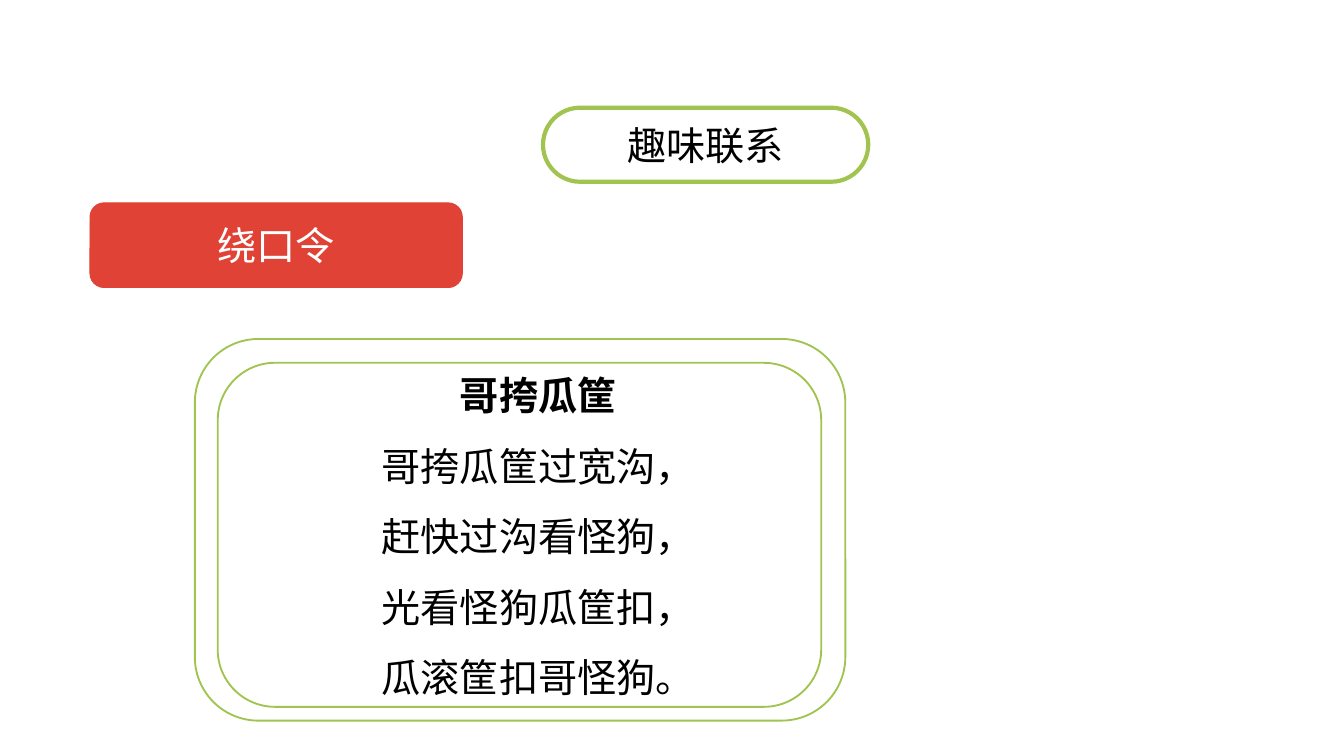
from dataclasses import dataclass

from lxml import etree
from pptx import Presentation
from pptx.dml.color import RGBColor
from pptx.enum.shapes import MSO_SHAPE
from pptx.enum.text import MSO_ANCHOR, MSO_AUTO_SIZE, PP_ALIGN
from pptx.oxml.ns import qn
from pptx.util import Inches, Pt

ROUNDED = MSO_SHAPE.ROUNDED_RECTANGLE
MIDDLE, TOP = MSO_ANCHOR.MIDDLE, MSO_ANCHOR.TOP
CENTER = PP_ALIGN.CENTER
GROW = MSO_AUTO_SIZE.SHAPE_TO_FIT_TEXT
BLANK_LAYOUT = 6


@dataclass(frozen=True)
class Theme:
    font: str = "Noto Sans CJK SC"
    size: float = 21
    green: str = "A1C450"
    red: str = "E04236"
    dark: str = "000000"
    light: str = "FFFFFF"


THEME = Theme()
WIDTH = Inches(10)
HEIGHT = WIDTH * 9 // 16

TITLE = "趣味联系"
LABEL = "绕口令"
VERSE_TITLE = "哥挎瓜筐"
VERSES = ["哥挎瓜筐过宽沟，", "赶快过沟看怪狗，", "光看怪狗瓜筐扣，", "瓜滚筐扣哥怪狗。"]


def place(left, top, width, height):
    """Turn percentages of the slide into lengths."""
    return [round(share * side / 100) for share, side in
            zip((left, top, width, height), (WIDTH, HEIGHT) * 2)]


def add_rounded_box(page, area, line, weight, fill=None, rounding=None):
    box = page.shapes.add_shape(ROUNDED, *place(*area))
    box.shadow.inherit = False
    if rounding is not None:
        box.adjustments[0] = rounding
    if fill:
        box.fill.solid()
        box.fill.fore_color.rgb = RGBColor.from_string(fill)
    else:
        box.fill.background()
    box.line.color.rgb = RGBColor.from_string(line)
    box.line.width = Pt(weight)
    return box


def prepare_frame(box, anchor):
    frame = box.text_frame
    frame.word_wrap = True
    frame.vertical_anchor = anchor
    frame.margin_left = frame.margin_right = Inches(0.07)
    frame.margin_top = frame.margin_bottom = Inches(0.04)
    return frame


def write_line(para, text, color, bold=False):
    para.alignment = CENTER
    span = para.add_run()
    span.text = text
    span.font.size = Pt(THEME.size)
    span.font.bold = bold
    span.font.color.rgb = RGBColor.from_string(color)
    span.font.name = THEME.font
    # Chinese glyphs take the East Asian typeface
    etree.SubElement(span.font._element, qn("a:ea"), typeface=THEME.font)


def add_caption(box, text, color):
    write_line(prepare_frame(box, MIDDLE).paragraphs[0], text, color)


def add_verse(page, area):
    box = page.shapes.add_textbox(*place(*area))
    frame = prepare_frame(box, TOP)
    frame.auto_size = GROW
    for number, text in enumerate([VERSE_TITLE, *VERSES]):
        para = frame.add_paragraph() if number else frame.paragraphs[0]
        para.line_spacing = 1.5
        write_line(para, text, THEME.dark, bold=number == 0)


def main():
    deck = Presentation()
    deck.slide_width, deck.slide_height = WIDTH, HEIGHT
    page = deck.slides.add_slide(deck.slide_layouts[BLANK_LAYOUT])

    # Title pill
    pill = add_rounded_box(page, (40.4, 14.25, 24.2, 9.8), THEME.green, 2.25,
                           rounding=0.5)
    add_caption(pill, TITLE, THEME.dark)

    # Tongue twister
    add_verse(page, (12.3, 45.33, 55.5, 48.53))

    # Section label
    label = add_rounded_box(page, (6.7, 26.84, 27.7, 11.2), THEME.red, 0.5,
                            fill=THEME.red)
    add_caption(label, LABEL, THEME.light)

    # Double frame around the verse, inner then outer
    for area in ((16.2, 48, 44.9, 45.51), (14.5, 44.84, 48.4, 50.49)):
        add_rounded_box(page, area, THEME.green, 1)

    deck.save("out.pptx")


if __name__ == "__main__":
    main()
